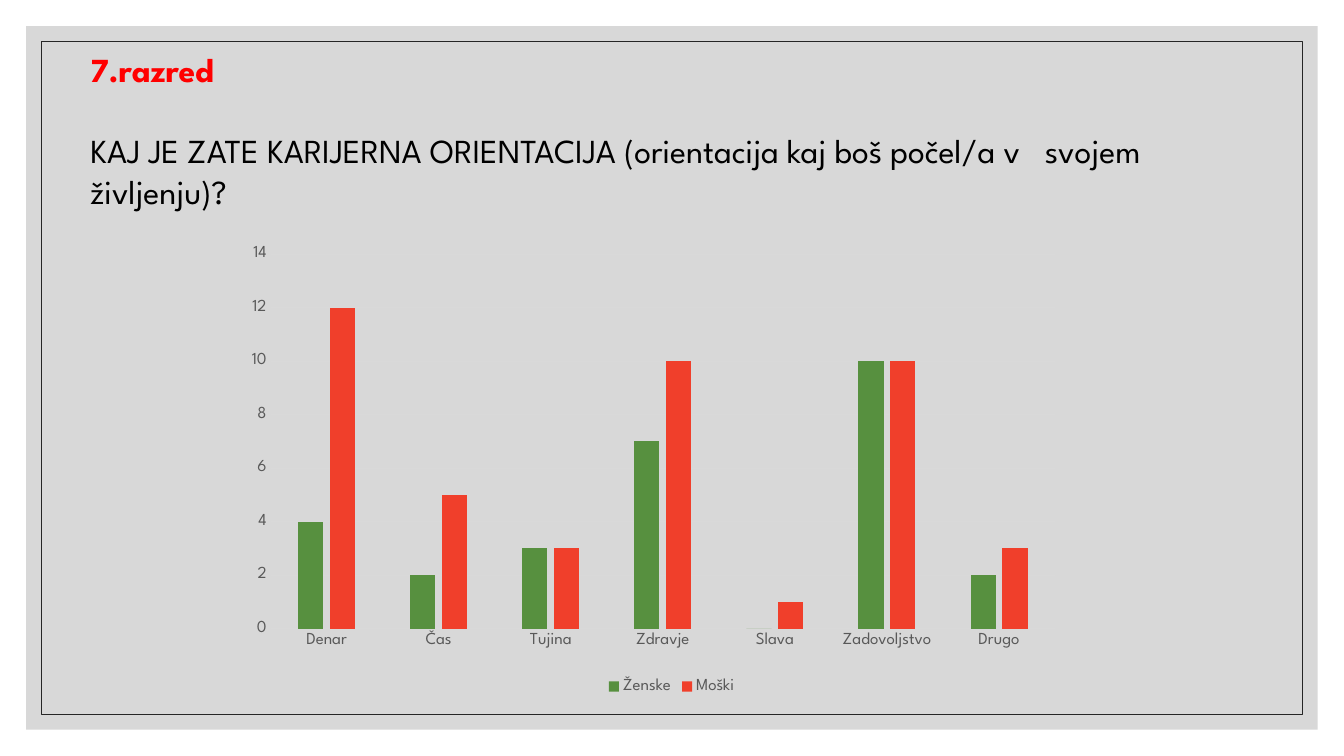
from lxml import etree
from pptx import Presentation
from pptx.chart.data import CategoryChartData
from pptx.dml.color import RGBColor
from pptx.enum.chart import XL_CHART_TYPE as ChartType, XL_LEGEND_POSITION as LegendPosition
from pptx.enum.chart import XL_TICK_MARK as TickMark
from pptx.enum.shapes import MSO_SHAPE as Shape
from pptx.oxml import parse_xml
from pptx.oxml.ns import nsdecls, qn
from pptx.util import Cm, Pt

WHITE = RGBColor(0xFF, 0xFF, 0xFF)
BLACK = RGBColor(0, 0, 0)
RED = RGBColor(0xFF, 0, 0)
PANEL_GREY = RGBColor(0xBF, 0xBF, 0xBF)
FRAME_GREY = RGBColor(0x26, 0x26, 0x26)
LABEL_GREY = RGBColor(0x59, 0x59, 0x59)
GRID_GREY = RGBColor(0xD9, 0xD9, 0xD9)
WOMEN_GREEN = RGBColor(0x57, 0x90, 0x3F)
MEN_RED = RGBColor(0xF0, 0x3F, 0x2B)

SLIDE_WIDTH, SLIDE_HEIGHT = 33.87, 19.05
ANSWERS = ["Denar", "Čas", "Tujina", "Zdravje", "Slava", "Zadovoljstvo", "Drugo"]
COUNTS = [
    ("Ženske", (4, 2, 3, 7, 0, 10, 2), WOMEN_GREEN),
    ("Moški", (12, 5, 3, 10, 1, 10, 3), MEN_RED),
]


class SurveySlide:
    font_name = "League Spartan"
    heading_size = Pt(24)
    label_size = Pt(12)

    def __init__(self, presentation):
        self.slide = presentation.slides.add_slide(presentation.slide_layouts[6])
        self.slide.background.fill.solid()
        self.slide.background.fill.fore_color.rgb = WHITE

    def style_font(self, font, size, color, bold=False):
        font.name = self.font_name
        font.size = size
        font.bold = bold
        font.color.rgb = color

    def add_inset_rectangle(self, margin):
        """Add a rectangle at an equal distance (cm) from all slide edges."""
        rectangle = self.slide.shapes.add_shape(
            Shape.RECTANGLE, Cm(margin), Cm(margin),
            Cm(SLIDE_WIDTH - 2 * margin), Cm(SLIDE_HEIGHT - 2 * margin))
        rectangle.shadow.inherit = False
        return rectangle

    def add_panel(self, margin, opacity):
        panel = self.add_inset_rectangle(margin)
        panel.fill.solid()
        panel.fill.fore_color.rgb = PANEL_GREY
        panel.line.fill.background()
        color = panel._element.spPr.find(qn("a:solidFill")).find(qn("a:srgbClr"))
        etree.SubElement(color, qn("a:alpha")).set("val", str(opacity * 1000))

    def add_frame(self, margin):
        frame = self.add_inset_rectangle(margin)
        frame.fill.background()
        frame.line.color.rgb = FRAME_GREY
        frame.line.width = Pt(0.5)

    def add_heading(self, left, top, width, height, grade, question):
        heading = self.slide.shapes.add_textbox(Cm(left), Cm(top), Cm(width), Cm(height))
        text_frame = heading.text_frame
        text_frame.word_wrap = True
        text_frame.text = f"{grade}\n{question}"
        grade_line, question_line = text_frame.paragraphs
        question_line.space_before = Pt(29)
        self.style_font(grade_line.runs[0].font, self.heading_size, RED, bold=True)
        self.style_font(question_line.runs[0].font, self.heading_size, BLACK)

    def add_column_chart(self, left, top, width, height, plot_area):
        data = CategoryChartData()
        data.categories = ANSWERS
        for name, counts, _ in COUNTS:
            data.add_series(name, counts)
        chart = self.slide.shapes.add_chart(
            ChartType.COLUMN_CLUSTERED, Cm(left), Cm(top), Cm(width), Cm(height), data).chart
        self.style_font(chart.font, Pt(10), BLACK)
        chart.has_title = False
        chart.has_legend = True
        chart.legend.position = LegendPosition.BOTTOM
        chart.legend.include_in_layout = False
        self.style_font(chart.legend.font, self.label_size, LABEL_GREY)

        plot = chart.plots[0]
        plot.gap_width = 219
        plot.overlap = -27
        plot.vary_by_categories = False
        for series, (_, _, color) in zip(plot.series, COUNTS):
            series.format.fill.solid()
            series.format.fill.fore_color.rgb = color
            series.invert_if_negative = False

        for axis in (chart.category_axis, chart.value_axis):
            axis.major_tick_mark = axis.minor_tick_mark = TickMark.NONE
            self.style_font(axis.tick_labels.font, self.label_size, LABEL_GREY)
        chart.value_axis.minimum_scale = 0
        chart.value_axis.maximum_scale = 14
        chart.value_axis.major_unit = 2
        chart.value_axis.format.line.fill.background()
        for line in (chart.category_axis.format.line,
                     chart.value_axis.major_gridlines.format.line):
            line.color.rgb = GRID_GREY
            line.width = Pt(0.75)
        self.place_plot(chart, plot_area)

    def place_plot(self, chart, plot_area):
        """Fix the inner plot area, given as shares of the chart: x, y, w, h."""
        places = "".join(f'<c:{side} val="{share}"/>'
                         for side, share in zip("xywh", plot_area))
        layout = parse_xml(
            f'<c:layout {nsdecls("c")}><c:manualLayout><c:layoutTarget val="inner"/>'
            f'<c:xMode val="edge"/><c:yMode val="edge"/>{places}'
            f'</c:manualLayout></c:layout>')
        plot_element = chart._chartSpace.chart.plotArea
        for automatic in plot_element.findall(qn("c:layout")):
            plot_element.remove(automatic)
        plot_element.insert(0, layout)


def main():
    presentation = Presentation()
    presentation.slide_width = Cm(SLIDE_WIDTH)
    presentation.slide_height = Cm(SLIDE_HEIGHT)
    survey = SurveySlide(presentation)
    survey.add_panel(margin=0.66, opacity=60)
    survey.add_frame(margin=1.04)
    survey.add_heading(
        2.03, 1.12, 29.82, 5.38, "7.razred",
        "KAJ JE ZATE KARIJERNA ORIENTACIJA "
        "(orientacija kaj boš počel/a v   svojem življenju)?")
    survey.add_column_chart(5.94, 4.11, 21.97, 13.49, plot_area=(0.04, 0.17, 0.9, 0.7))
    presentation.save("out.pptx")


if __name__ == "__main__":
    main()
